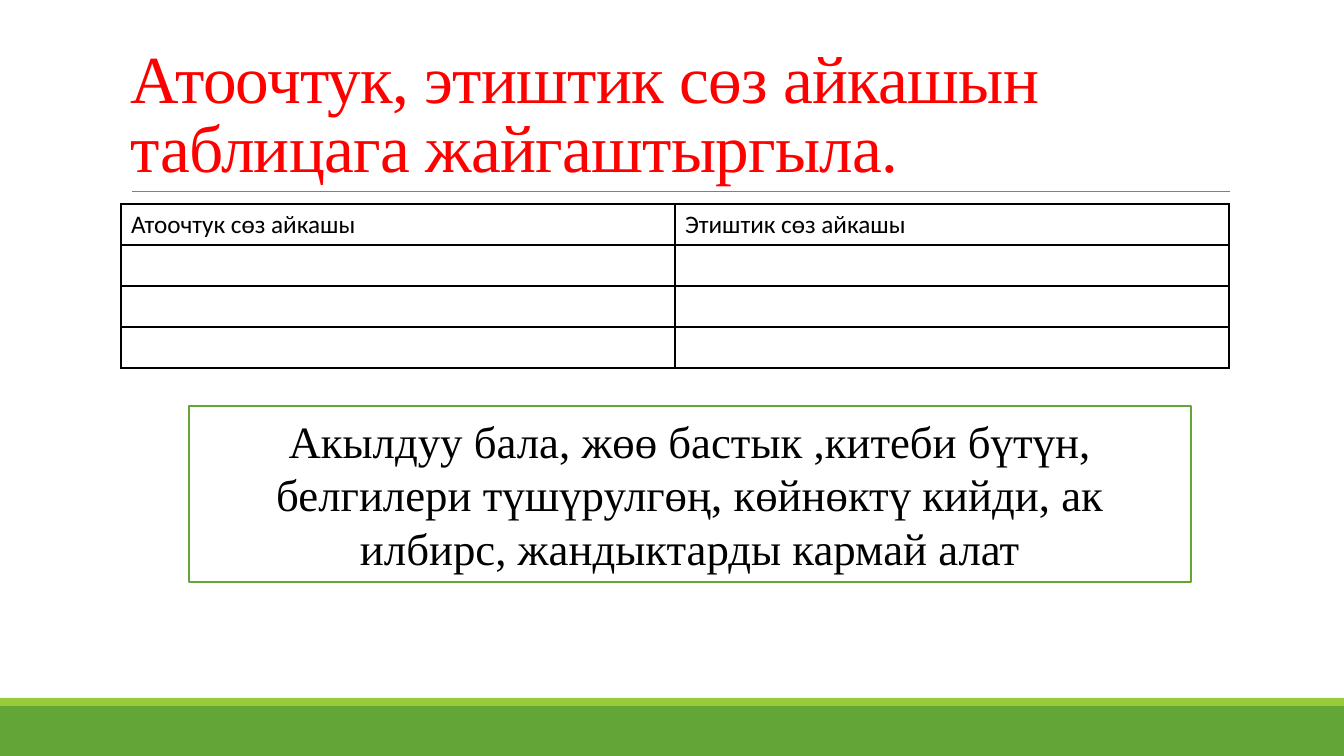
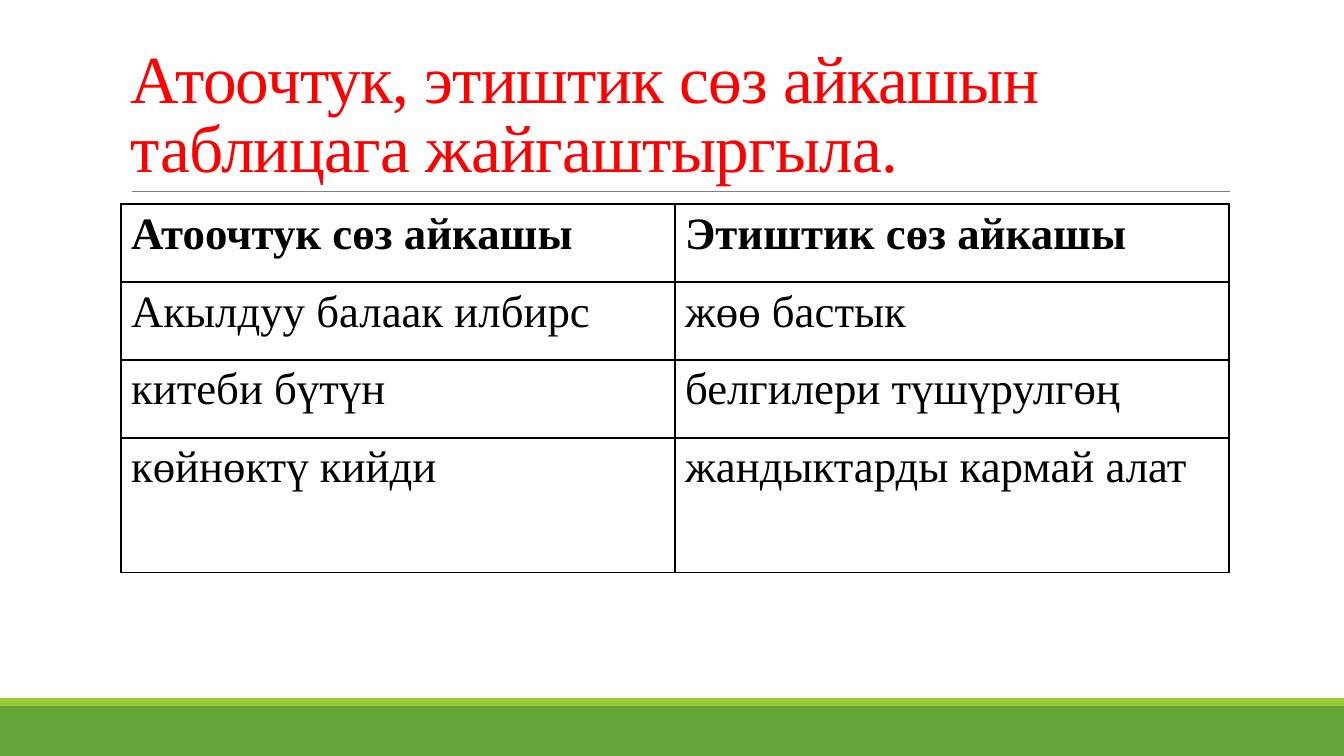
from lxml import etree
from pptx import Presentation
from pptx.dml.color import RGBColor
from pptx.enum.shapes import MSO_CONNECTOR, MSO_SHAPE
from pptx.enum.text import MSO_ANCHOR, PP_ALIGN
from pptx.oxml import parse_xml
from pptx.oxml.ns import nsdecls, qn
from pptx.util import Pt

RECTANGLE = MSO_SHAPE.RECTANGLE
STRAIGHT = MSO_CONNECTOR.STRAIGHT
BOTTOM, MIDDLE = MSO_ANCHOR.BOTTOM, MSO_ANCHOR.MIDDLE
CENTER = PP_ALIGN.CENTER

GREEN = RGBColor(0x63, 0xA5, 0x37)
LIME = RGBColor(0x99, 0xCB, 0x38)
GRAY = RGBColor(0x80, 0x80, 0x80)
RED = RGBColor(0xFF, 0x00, 0x00)
BLACK = RGBColor(0x00, 0x00, 0x00)
WHITE = RGBColor(0xFF, 0xFF, 0xFF)

SERIF, SANS = "Times New Roman", "Calibri"
TITLE = "Атоочтук, этиштик сөз айкашын таблицага жайгаштыргыла."
HEADINGS = ("Атоочтук сөз айкашы", "Этиштик сөз айкашы")
WORD_BANK = ("Акылдуу бала, жөө бастык ,китеби бүтүн, белгилери түшүрулгөң, "
             "көйнөктү кийди, ак илбирс, жандыктарды кармай алат")

EMU_PER_PX = 914400 / 100.8
WIDTH, HEIGHT = 1344, 756
LEFT, TABLE_TOP, COLUMN_WIDTH = 121, 204, 554
BANDS = [(706, 50, GREEN), (698, 8, LIME)]

# Rows, row heights, font, size and heading weight of each slide's table
TABLES = [
    ([HEADINGS, ("", ""), ("", ""), ("", "")], [41, 41, 41, 41], SANS, 18, False),
    ([HEADINGS,
      ("Акылдуу балаак илбирс", "жөө бастык"),
      ("китеби бүтүн", "белгилери түшүрулгөң"),
      ("көйнөктү кийди", "жандыктарды кармай алат")],
     [78, 78, 78, 135], SERIF, 32, True),
]


def px(*lengths):
    """Turn px lengths into EMU."""
    return [round(length * EMU_PER_PX) for length in lengths]


def add_run(paragraph, text, font, size, color, bold=False):
    run = paragraph.add_run()
    run.text = text
    run.font.name, run.font.size, run.font.bold = font, Pt(size), bold
    run.font.color.rgb = color
    return run


prs = Presentation()
prs.slide_width, prs.slide_height = px(WIDTH, HEIGHT)
slides = []

for rows, row_heights, font, size, bold_headings in TABLES:
    slide = prs.slides.add_slide(prs.slide_layouts[6])
    slides.append(slide)

    for top, height, color in BANDS:
        band = slide.shapes.add_shape(RECTANGLE, *px(0, top, WIDTH, height))
        band.shadow.inherit = False
        band.fill.solid()
        band.fill.fore_color.rgb = color
        band.line.fill.background()

    rule = slide.shapes.add_connector(STRAIGHT, *px(132, 191, 1230, 191))
    rule.line.color.rgb = GRAY
    rule.line.width = Pt(0.5)
    etree.SubElement(rule._element.spPr, qn("a:effectLst"))

    title = slide.shapes.add_textbox(*px(LEFT, 31, 2 * COLUMN_WIDTH, 160)).text_frame
    title.word_wrap = True
    title.vertical_anchor = BOTTOM
    title.paragraphs[0].line_spacing = 0.85
    title_run = add_run(title.paragraphs[0], TITLE, SERIF, 48, RED)
    title_run.font._element.set("spc", "-50")

    table = slide.shapes.add_table(
        len(rows), 2, *px(LEFT, TABLE_TOP, 2 * COLUMN_WIDTH, sum(row_heights))).table
    table.first_row = table.horz_banding = False
    for column in table.columns:
        column.width = px(COLUMN_WIDTH)[0]
    for r, (texts, height) in enumerate(zip(rows, row_heights)):
        table.rows[r].height = px(height)[0]
        for c, text in enumerate(texts):
            cell = table.cell(r, c)
            if text:
                add_run(cell.text_frame.paragraphs[0], text, font, size, BLACK,
                        bold_headings and r == 0)
            properties = cell._tc.get_or_add_tcPr()
            for side in ("lnL", "lnR", "lnT", "lnB"):
                properties.append(parse_xml(
                    f'<a:{side} {nsdecls("a")} w="{Pt(1)}"><a:solidFill>'
                    f'<a:srgbClr val="{BLACK}"/></a:solidFill></a:{side}>'))
            cell.fill.background()

word_box = slides[0].shapes.add_shape(RECTANGLE, *px(189, 406, 1002, 176))
word_box.shadow.inherit = False
word_box.fill.solid()
word_box.fill.fore_color.rgb = WHITE
word_box.line.color.rgb = GREEN
word_box.line.width = Pt(1.25)
word_box.text_frame.word_wrap = True
word_box.text_frame.vertical_anchor = MIDDLE
words = word_box.text_frame.paragraphs[0]
words.alignment = CENTER
add_run(words, WORD_BANK, SERIF, 32, BLACK)

prs.save("out.pptx")
